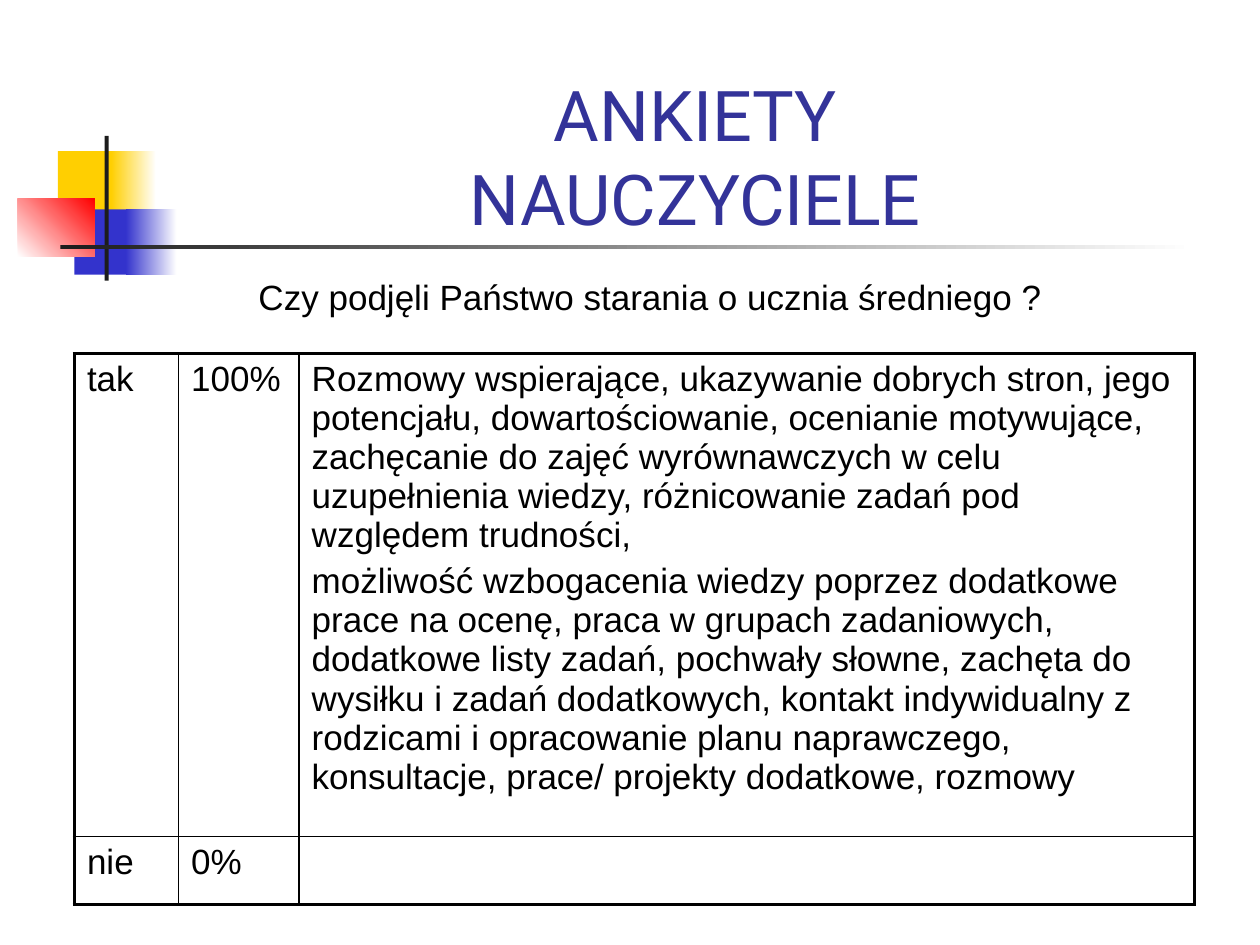
import pptx
import pptx.util
import pptx.dml.color
import pptx.enum.shapes
import pptx.enum.text
import pptx.oxml.ns
from lxml import etree

Cm, Pt = pptx.util.Cm, pptx.util.Pt

COLORS = {
    "yellow": "FFCF01", "blue": "3333CC", "red": "FF0000", "white": "FFFFFF",
    "dark": "1C1C1C", "heading": "333399", "black": "000000",
}
HEADING = "ANKIETY\nNAUCZYCIELE"
QUESTION = "Czy podjęli Państwo starania o ucznia średniego ?"
ANSWERS = [
    ("tak", "100%",
     "Rozmowy wspierające, ukazywanie dobrych stron, jego potencjału, "
     "dowartościowanie, ocenianie motywujące, zachęcanie do zajęć wyrównawczych "
     "w celu uzupełnienia wiedzy, różnicowanie zadań pod względem trudności,\n"
     "możliwość wzbogacenia wiedzy poprzez dodatkowe prace na ocenę, praca w "
     "grupach zadaniowych, dodatkowe listy zadań, pochwały słowne, zachęta do "
     "wysiłku i zadań dodatkowych, kontakt indywidualny z rodzicami i opracowanie "
     "planu naprawczego, konsultacje, prace/ projekty dodatkowe, rozmowy"),
    ("nie", "0%", ""),
]
COLUMN_WIDTHS = [2.1, 2.43, 18.05]
ROW_HEIGHTS = [9.73, 1.37]
ORNAMENTS = [
    ((1.17, 3.05, 1.22, 1.32), ["yellow"], 0),
    ((2.24, 3.05, 0.91, 1.32), ["yellow", "white"], 0),
    ((1.5, 4.22, 1.17, 1.32), ["blue"], 0),
    ((2.54, 4.22, 1.02, 1.32), ["blue", "white"], 0),
    ((0.36, 4.01, 1.55, 1.17), ["white", "red"], 45),
    ((2.11, 2.74, 0.08, 2.92), ["dark"], 0),
    ((1.22, 4.94, 22.86, 0.09), ["dark", "white"], 0),
]


def rgb(name):
    return pptx.dml.color.RGBColor.from_string(COLORS[name])


def add_ornament(page, place, names, angle):
    box = page.shapes.add_shape(pptx.enum.shapes.MSO_SHAPE.RECTANGLE, *map(Cm, place))
    box.shadow.inherit = False
    box.line.fill.background()
    if len(names) == 1:
        box.fill.solid()
        box.fill.fore_color.rgb = rgb(names[0])
        return
    box.fill.gradient()
    box.fill.gradient_angle = angle
    for position, (stop, name) in enumerate(zip(box.fill.gradient_stops, names)):
        stop.position = position
        stop.color.rgb = rgb(name)


def write(frame, text, font, size, color, align=None, before=0):
    frame.text = text
    for para in frame.paragraphs:
        para.alignment = align
        para.space_before = Pt(before)
        para.font.size = Pt(size)
        for span in para.runs:
            span.font.name = font
            span.font.size = Pt(size)
            span.font.color.rgb = rgb(color)


def set_borders(cell, widths):
    properties = cell._tc.get_or_add_tcPr()
    for index, (side, width) in enumerate(widths.items()):
        line = etree.Element(pptx.oxml.ns.qn("a:ln" + side), w=str(Pt(width)))
        fill = etree.SubElement(line, pptx.oxml.ns.qn("a:solidFill"))
        etree.SubElement(fill, pptx.oxml.ns.qn("a:srgbClr"), val=COLORS["black"])
        properties.insert(index, line)


def add_answers(page):
    rows, columns = len(ROW_HEIGHTS), len(COLUMN_WIDTHS)
    table = page.shapes.add_table(
        rows, columns, Cm(1.5), Cm(7.13),
        Cm(sum(COLUMN_WIDTHS)), Cm(sum(ROW_HEIGHTS))).table
    table.first_row = table.horz_banding = False
    for column, width in zip(table.columns, COLUMN_WIDTHS):
        column.width = Cm(width)
    for r, (row, texts) in enumerate(zip(table.rows, ANSWERS)):
        row.height = Cm(ROW_HEIGHTS[r])
        for c, text in enumerate(texts):
            cell = table.cell(r, c)
            cell.fill.background()
            write(cell.text_frame, text, "Arial", 20, "black", before=4)
            outer = {"L": c == 0, "R": c == columns - 1, "T": r == 0, "B": r == rows - 1}
            set_borders(cell, {side: 2.25 if edge else 1 for side, edge in outer.items()})


def main():
    deck = pptx.Presentation()
    deck.slide_width, deck.slide_height = Cm(25.4), Cm(19.05)
    page = deck.slides.add_slide(deck.slide_layouts[5])
    center = pptx.enum.text.PP_ALIGN.CENTER

    for place, names, angle in ORNAMENTS:
        add_ornament(page, place, names, angle)

    title = page.shapes.title
    title.left, title.top, title.width, title.height = map(Cm, (2.29, 5.13, 21.64, 1.4))
    title.text_frame.auto_size = pptx.enum.text.MSO_AUTO_SIZE.NONE
    title.text_frame.vertical_anchor = pptx.enum.text.MSO_ANCHOR.BOTTOM
    write(title.text_frame, QUESTION, "Arial", 20, "black", center)
    page.shapes.element.append(title.element)

    add_answers(page)

    heading = page.shapes.add_textbox(*map(Cm, (3.2, 1.32, 21.64, 3.18)))
    heading.text_frame.word_wrap = True
    write(heading.text_frame, HEADING, "Roboto", 40, "heading", center)

    deck.save("out.pptx")


if __name__ == "__main__":
    main()
